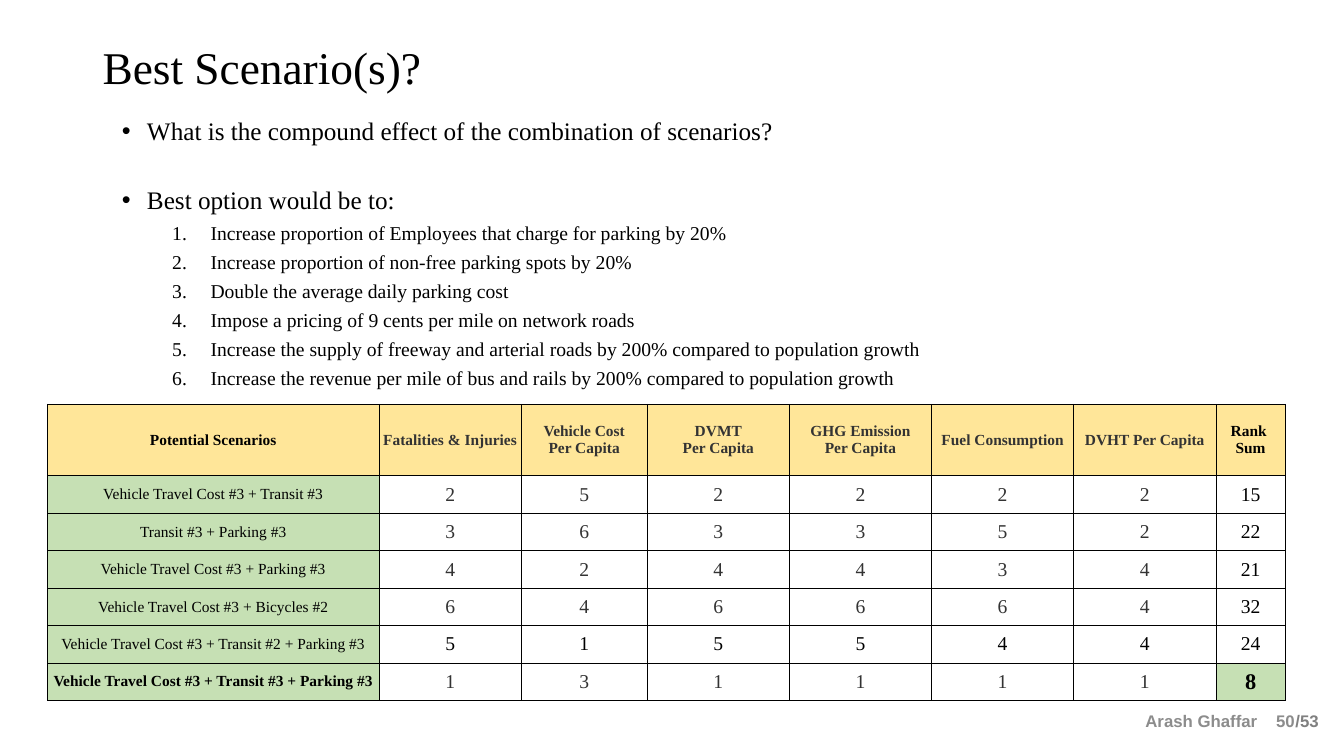
from dataclasses import dataclass

from lxml.etree import SubElement
from pptx import Presentation
from pptx.dml.color import RGBColor
from pptx.enum.text import MSO_ANCHOR as Anchor, PP_ALIGN as Align
from pptx.oxml.ns import qn
from pptx.util import Inches, Pt

SERIF, SANS = "Times New Roman", "Arial"
BLACK, CHARCOAL = "000000", "333333"
YELLOW, GREEN = "FFE699", "C6E0B4"


@dataclass
class Scenario:
    name: str
    ranks: tuple[int, ...]
    rank_sum: int
    rank_color: str = CHARCOAL
    best: bool = False


@dataclass
class Point:
    text: str
    size: float = 14
    level: int = 2
    margin: float = 1.38
    hanging: float = 0.38
    before: float = 5.6
    numbered: bool = True


HEADERS = ["Potential Scenarios", "Fatalities & Injuries", "Vehicle Cost\vPer Capita",
           "DVMT\vPer Capita", "GHG Emission\vPer Capita", "Fuel Consumption",
           "DVHT Per Capita", "Rank \nSum"]
COLUMN_WIDTHS = [3.29, 1.41, 1.25, 1.41, 1.41, 1.41, 1.41, 0.69]
TABLE_HEIGHT, HEADER_HEIGHT = 2.94, 0.71

SCENARIOS = [
    Scenario("Vehicle Travel Cost #3 + Transit #3", (2, 5, 2, 2, 2, 2), 15),
    Scenario("Transit #3 + Parking #3", (3, 6, 3, 3, 5, 2), 22),
    Scenario("Vehicle Travel Cost #3 + Parking #3", (4, 2, 4, 4, 3, 4), 21),
    Scenario("Vehicle Travel Cost #3 + Bicycles #2", (6, 4, 6, 6, 6, 4), 32),
    Scenario("Vehicle Travel Cost #3 + Transit #2 + Parking #3", (5, 1, 5, 5, 4, 4), 24,
             rank_color=BLACK),
    Scenario("Vehicle Travel Cost #3 + Transit #3 + Parking #3", (1, 3, 1, 1, 1, 1), 8,
             best=True),
]

QUESTION = dict(size=18, level=1, margin=0.75, hanging=0.25, numbered=False)
POINTS = [
    Point("What is the compound effect of the combination of scenarios?", **QUESTION),
    Point("Best option would be to:", before=30, **QUESTION),
    Point("Increase proportion of Employees that charge for parking by 20%"),
    Point("Increase proportion of non-free parking spots by 20%"),
    Point("Double the average daily parking cost"),
    Point("Impose a pricing of 9 cents per mile on network roads"),
    Point("Increase the supply of freeway and arterial roads by 200% compared to population growth"),
    Point("Increase the revenue per mile of bus and rails by 200% compared to population growth"),
]


def rgb(color: str) -> RGBColor:
    return RGBColor.from_string(color)


def write(tf, text: str, *, size: float, font: str = SERIF, color: str = BLACK,
          bold: bool = False, align=Align.LEFT, spacing: float = 1.0) -> None:
    """Fill a text frame: a newline starts a paragraph, a vertical tab breaks the line."""
    for i, line in enumerate(text.split("\n")):
        p = tf.paragraphs[0] if i == 0 else tf.add_paragraph()
        p.text, p.alignment, p.line_spacing = line, align, spacing
        for r in p.runs:
            r.font.name, r.font.size, r.font.bold = font, Pt(size), bold
            r.font.color.rgb = rgb(color)


def add_frame(slide, left: float, top: float, width: float, height: float,
              anchor=Anchor.TOP, wrap: bool = True):
    tf = slide.shapes.add_textbox(*map(Inches, (left, top, width, height))).text_frame
    tf.word_wrap, tf.vertical_anchor = wrap, anchor
    return tf


def add_bullet(p, point: Point) -> None:
    p.level = point.level
    p.space_before = Pt(point.before)
    pPr = p._p.get_or_add_pPr()
    pPr.set("marL", str(Inches(point.margin)))
    pPr.set("indent", str(-Inches(point.hanging)))
    if point.numbered:
        SubElement(pPr, qn("a:buFont"), typeface="+mj-lt")
        SubElement(pPr, qn("a:buAutoNum"), type="arabicPeriod")
    else:
        SubElement(pPr, qn("a:buFont"), typeface=SANS)
        SubElement(pPr, qn("a:buChar"), char="•")


def add_points(slide) -> None:
    tf = add_frame(slide, 0.61, 1.13, 11.97, 2.8)
    sizes = {point.size for point in POINTS}
    write(tf, "\n".join(point.text for point in POINTS), size=max(sizes), spacing=0.9)
    for p, point in zip(tf.paragraphs, POINTS):
        p.runs[0].font.size = Pt(point.size)
        add_bullet(p, point)


def add_borders(cell) -> None:
    tcPr = cell._tc.get_or_add_tcPr()
    for side in ("lnL", "lnR", "lnT", "lnB"):
        ln = SubElement(tcPr, qn(f"a:{side}"), w=str(Pt(0.5)))
        SubElement(SubElement(ln, qn("a:solidFill")), qn("a:srgbClr"), val=BLACK)


def fill_cell(cell, text: str, fill: str | None = None, **fmt) -> None:
    cell.margin_left = cell.margin_right = cell.margin_top = cell.margin_bottom = 0
    cell.vertical_anchor = Anchor.MIDDLE
    write(cell.text_frame, text, align=Align.CENTER, **fmt)
    add_borders(cell)
    if fill:
        cell.fill.solid()
        cell.fill.fore_color.rgb = rgb(fill)
    else:
        cell.fill.background()


def add_scenario_table(slide) -> None:
    last = len(HEADERS) - 1
    table = slide.shapes.add_table(len(SCENARIOS) + 1, len(HEADERS), Inches(0.47), Inches(4.01),
                                   Inches(sum(COLUMN_WIDTHS)), Inches(TABLE_HEIGHT)).table
    table.first_row = table.horz_banding = False
    for column, width in zip(table.columns, COLUMN_WIDTHS):
        column.width = Inches(width)
    table.rows[0].height = Inches(HEADER_HEIGHT)
    for i, header in enumerate(HEADERS):
        fill_cell(table.cell(0, i), header, YELLOW, size=11, bold=True,
                  color=BLACK if i in (0, last) else CHARCOAL)

    for row, scenario in enumerate(SCENARIOS, 1):
        table.rows[row].height = Inches((TABLE_HEIGHT - HEADER_HEIGHT) / len(SCENARIOS))
        fill_cell(table.cell(row, 0), scenario.name, GREEN, size=11, bold=scenario.best)
        for i, rank in enumerate(scenario.ranks, 1):
            fill_cell(table.cell(row, i), str(rank), size=14, color=scenario.rank_color)
        fill_cell(table.cell(row, last), str(scenario.rank_sum),
                  GREEN if scenario.best else None,
                  size=16 if scenario.best else 14, bold=scenario.best)


def add_footer(slide) -> None:
    footer = dict(size=12, font=SANS, bold=True)
    write(add_frame(slide, 12.75, 7, 0.44, 0.3, wrap=False), "/53", color="808080", **footer)
    for text, right, width in (("Arash Ghaffar", 12.57, 2), ("50", 12.94, 0.5)):
        tf = add_frame(slide, right - width, 6.95, width, 0.4, Anchor.MIDDLE)
        write(tf, text, color="8C8C8C", align=Align.RIGHT, **footer)


def main() -> None:
    prs = Presentation()
    prs.slide_width, prs.slide_height = Inches(13.33), Inches(7.5)
    s = prs.slides.add_slide(prs.slide_layouts[6])
    title = add_frame(s, 0.92, 0.4, 11.5, 0.58, Anchor.MIDDLE)
    write(title, "Best Scenario(s)?", size=32.4, spacing=0.9)
    add_points(s)
    add_scenario_table(s)
    add_footer(s)
    prs.save("out.pptx")


if __name__ == "__main__":
    main()
